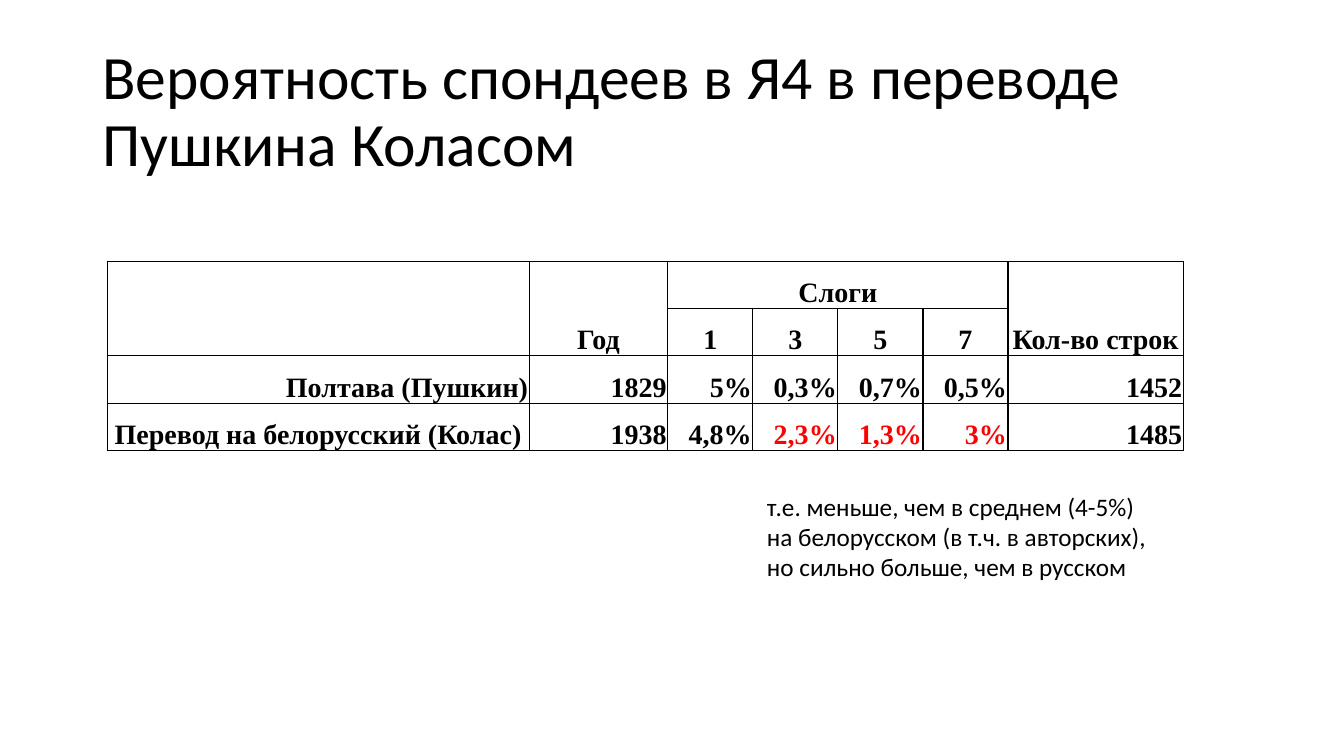
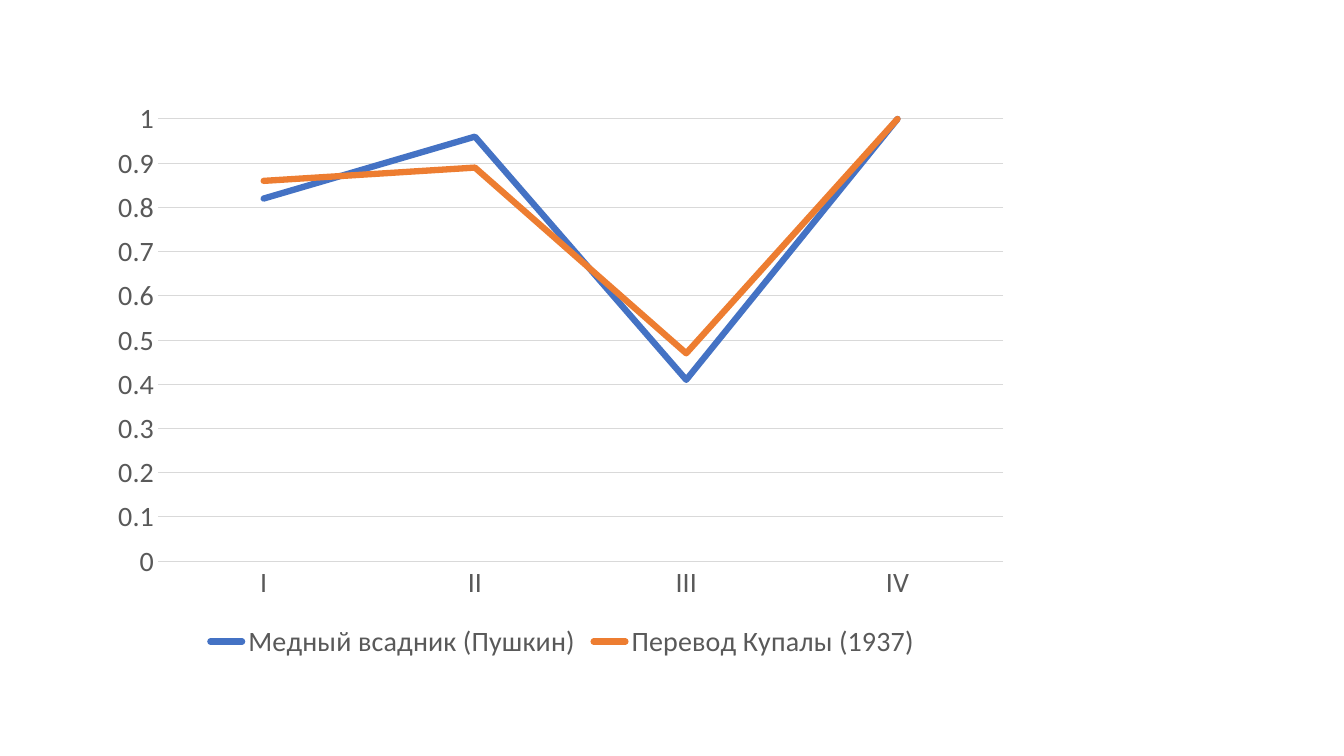
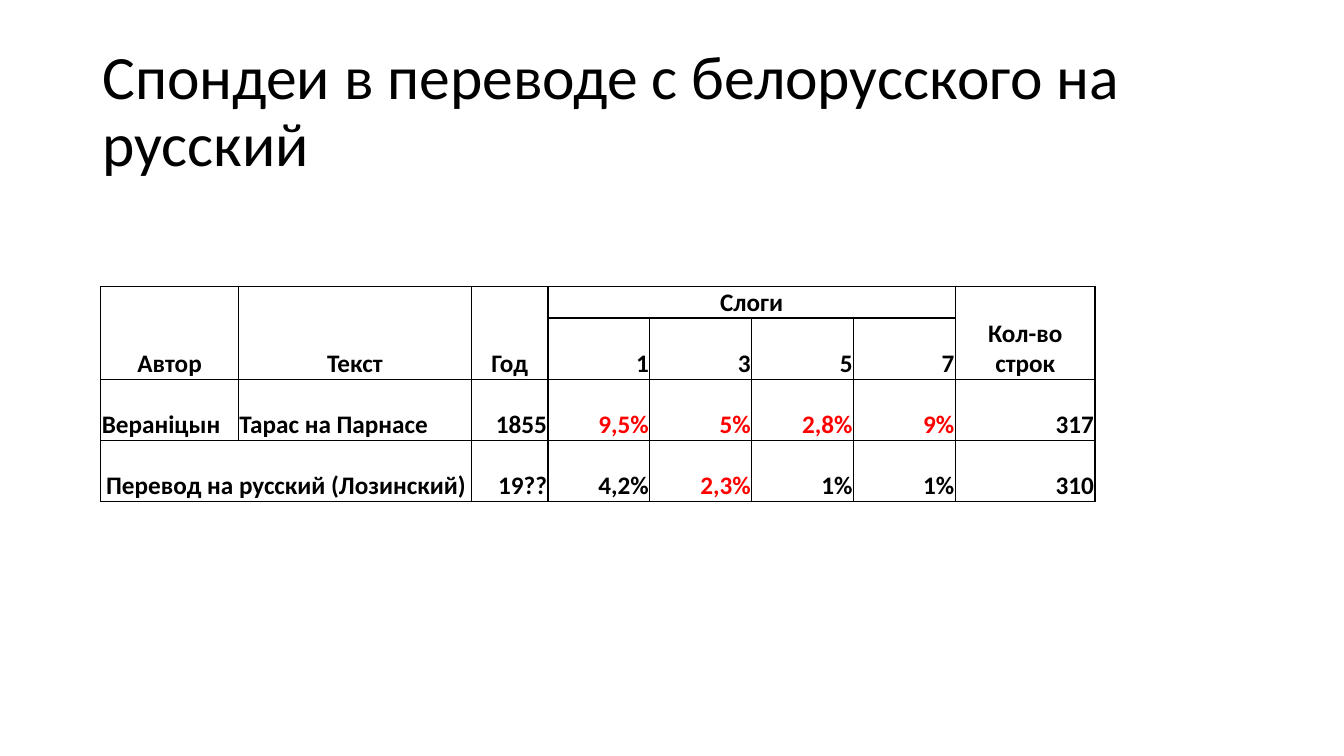
from collections import namedtuple
from dataclasses import dataclass

from lxml.etree import SubElement
from pptx import Presentation
from pptx.chart.data import CategoryChartData
from pptx.dml.color import RGBColor
from pptx.enum.chart import XL_CHART_TYPE, XL_LEGEND_POSITION, XL_MARKER_STYLE, XL_TICK_MARK
from pptx.enum.text import MSO_ANCHOR, MSO_AUTO_SIZE, PP_ALIGN
from pptx.oxml.ns import qn
from pptx.util import Emu, Pt

Box = namedtuple("Box", "x y w h")


@dataclass(frozen=True)
class Theme:
    text: str = "000000"
    accent: str = "FF0000"
    axis_text: str = "595959"
    grid: str = "D9D9D9"
    series: tuple = ("4472C4", "ED7D31")
    sans: str = "Calibri"
    serif: str = "Times New Roman"
    title_size: int = 44
    large_size: int = 20
    body_size: int = 18


THEME = Theme()
SLIDE = Box(0, 0, 1280, 720)
TITLE = Box(88, 38, 1104, 139)
ALIGN = {"l": PP_ALIGN.LEFT, "c": PP_ALIGN.CENTER, "r": PP_ALIGN.RIGHT}


def px(n):
    return Emu(n * 9525)


def place(box):
    return [px(n) for n in box]


def apply(obj, **values):
    for name, value in values.items():
        setattr(obj, name, value)


def set_font(font, size, color=THEME.text, name=THEME.sans, bold=False):
    apply(font, size=Pt(size), name=name, bold=bold)
    font.color.rgb = RGBColor.from_string(color)


def set_line(line, color, width):
    line.width = Pt(width)
    line.color.rgb = RGBColor.from_string(color)


def add_text(s, box, text, size, line_spacing=None, **frame):
    tf = s.shapes.add_textbox(*place(box)).text_frame
    apply(tf, **frame)
    p = tf.paragraphs[0]
    apply(p, text=text, line_spacing=line_spacing)
    for r in p.runs:
        set_font(r.font, size)


def add_title(s, text):
    add_text(s, TITLE, text, THEME.title_size, line_spacing=0.9,
             word_wrap=True, vertical_anchor=MSO_ANCHOR.MIDDLE)


# Tables
def add_borders(cell):
    tc_pr = cell._tc.get_or_add_tcPr()
    for side in ("a:lnL", "a:lnR", "a:lnT", "a:lnB"):
        ln = SubElement(tc_pr, qn(side), w=str(Pt(1)))
        fill = SubElement(ln, qn("a:solidFill"))
        SubElement(fill, qn("a:srgbClr"), val=THEME.text)


def add_grid(s, x, y, cols, heights, rows, aligns, merges, red, **font):
    """Bordered table; aligns has one letter a cell, red lists (row, column)."""
    box = Box(x, y, sum(cols), sum(heights))
    table = s.shapes.add_table(len(rows), len(cols), *place(box)).table
    apply(table, first_row=False, horz_banding=False)
    for column, width in zip(table.columns, cols):
        column.width = px(width)
    for row, height in zip(table.rows, heights):
        row.height = px(height)
    for i, row in enumerate(rows):
        for j, text in enumerate(row):
            cell = table.cell(i, j)
            apply(cell, margin_left=px(1), margin_right=px(1), margin_top=px(1),
                  margin_bottom=0, vertical_anchor=MSO_ANCHOR.BOTTOM)
            add_borders(cell)
            cell.fill.background()
            if text:
                p = cell.text_frame.paragraphs[0]
                p.alignment = ALIGN[aligns[i][j]]
                r = p.add_run()
                r.text = text
                color = THEME.accent if (i, j) in red else THEME.text
                set_font(r.font, color=color, bold=True, **font)
    for first, last in merges:
        table.cell(*first).merge(table.cell(*last))


# Line chart
def set_plot_layout(chart, **fractions):
    plot_area = chart.element.find(".//" + qn("c:plotArea"))
    for old in plot_area.findall(qn("c:layout")):
        plot_area.remove(old)
    layout = SubElement(plot_area, qn("c:layout"))
    plot_area.insert(0, layout)
    manual = SubElement(layout, qn("c:manualLayout"))
    settings = dict(layoutTarget="inner", xMode="edge", yMode="edge", **fractions)
    for name, value in settings.items():
        SubElement(manual, qn("c:" + name), val=str(value))


def add_line_chart(s, box, categories, series):
    data = CategoryChartData(number_format="General")
    data.categories = categories
    for name, values in series:
        data.add_series(name, values)
    chart = s.shapes.add_chart(XL_CHART_TYPE.LINE, *place(box), data).chart
    apply(chart, has_title=False, has_legend=True)
    set_font(chart.font, THEME.large_size, THEME.axis_text)
    apply(chart.legend, position=XL_LEGEND_POSITION.BOTTOM, include_in_layout=False)
    set_font(chart.legend.font, THEME.large_size, THEME.axis_text)

    for axis in (chart.category_axis, chart.value_axis):
        apply(axis, major_tick_mark=XL_TICK_MARK.NONE, minor_tick_mark=XL_TICK_MARK.NONE)
        set_font(axis.tick_labels.font, THEME.large_size, THEME.axis_text)
    set_line(chart.category_axis.format.line, THEME.grid, 0.75)
    value_axis = chart.value_axis
    apply(value_axis, minimum_scale=0, maximum_scale=1, major_unit=0.1,
          has_major_gridlines=True)
    value_axis.format.line.fill.background()
    set_line(value_axis.major_gridlines.format.line, THEME.grid, 0.75)

    plot = chart.plots[0]
    plot.vary_by_categories = False
    for line, color in zip(plot.series, THEME.series):
        line.smooth = False
        line.marker.style = XL_MARKER_STYLE.NONE
        set_line(line.format.line, color, 4.5)
    for ln in chart.element.iterfind(f".//{qn('c:ser')}/{qn('c:spPr')}/{qn('a:ln')}"):
        ln.set("cap", "rnd")
    set_plot_layout(chart, x=0.06, y=0.05, w=0.92, h=0.77)


# Slides
def kolas_slide(s):
    add_title(s, "Вероятность спондеев в Я4 в переводе Пушкина Коласом")
    add_grid(
        s, 102, 249, [402, 132] + [81] * 4 + [167], [45] * 4,
        rows=[
            ["", "Год", "Слоги", "", "", "", "Кол-во строк"],
            ["", "", "1", "3", "5", "7", ""],
            ["Полтава (Пушкин)", "1829", "5%", "0,3%", "0,7%", "0,5%", "1452"],
            ["Перевод на белорусский (Колас)", "1938", "4,8%", "2,3%", "1,3%", "3%", "1485"],
        ],
        aligns=["ccccccc", "ccccccc", "rrrrrrr", "crrrrrr"],
        merges=[((0, 0), (1, 0)), ((0, 1), (1, 1)), ((0, 2), (0, 5)), ((0, 6), (1, 6))],
        red={(3, 3), (3, 4), (3, 5)},
        size=THEME.large_size, name=THEME.serif)
    note = ("т.е. меньше, чем в среднем (4-5%)\v"
            "на белорусском (в т.ч. в авторских),\v"
            "но сильно больше, чем в русском")
    add_text(s, Box(721, 463, 390, 97), note, THEME.body_size,
             word_wrap=False, auto_size=MSO_AUTO_SIZE.SHAPE_TO_FIT_TEXT)


def kupala_slide(s):
    add_line_chart(s, Box(98, 86, 875, 547), ["I", "II", "III", "IV"], [
        ("Медный всадник (Пушкин)", (0.82, 0.96, 0.41, 1)),
        ("Перевод Купалы (1937)", (0.86, 0.89, 0.47, 1)),
    ])


def lozinsky_slide(s):
    add_title(s, "Спондеи в переводе с белорусского на русский")
    add_grid(
        s, 96, 273, [131, 222, 73] + [97] * 4 + [133], [29, 29, 58, 58],
        rows=[
            ["Автор", "Текст", "Год", "Слоги", "", "", "", "Кол-во строк"],
            ["", "", "", "1", "3", "5", "7", ""],
            ["Вераніцын", "Тарас на Парнасе", "1855", "9,5%", "5%", "2,8%", "9%", "317"],
            ["Перевод на русский (Лозинский)", "", "19??", "4,2%", "2,3%", "1%", "1%", "310"],
        ],
        aligns=["cccccccc", "cccrrrrc", "llrrrrrr", "ccrrrrrr"],
        merges=[((0, 0), (1, 0)), ((0, 1), (1, 1)), ((0, 2), (1, 2)),
                ((0, 3), (0, 6)), ((0, 7), (1, 7)), ((3, 0), (3, 1))],
        red={(2, 3), (2, 4), (2, 5), (2, 6), (3, 4)},
        size=THEME.body_size)


def main():
    prs = Presentation()
    apply(prs, slide_width=px(SLIDE.w), slide_height=px(SLIDE.h))
    for build in (kolas_slide, kupala_slide, lozinsky_slide):
        build(prs.slides.add_slide(prs.slide_layouts[6]))
    prs.save("out.pptx")


if __name__ == "__main__":
    main()
